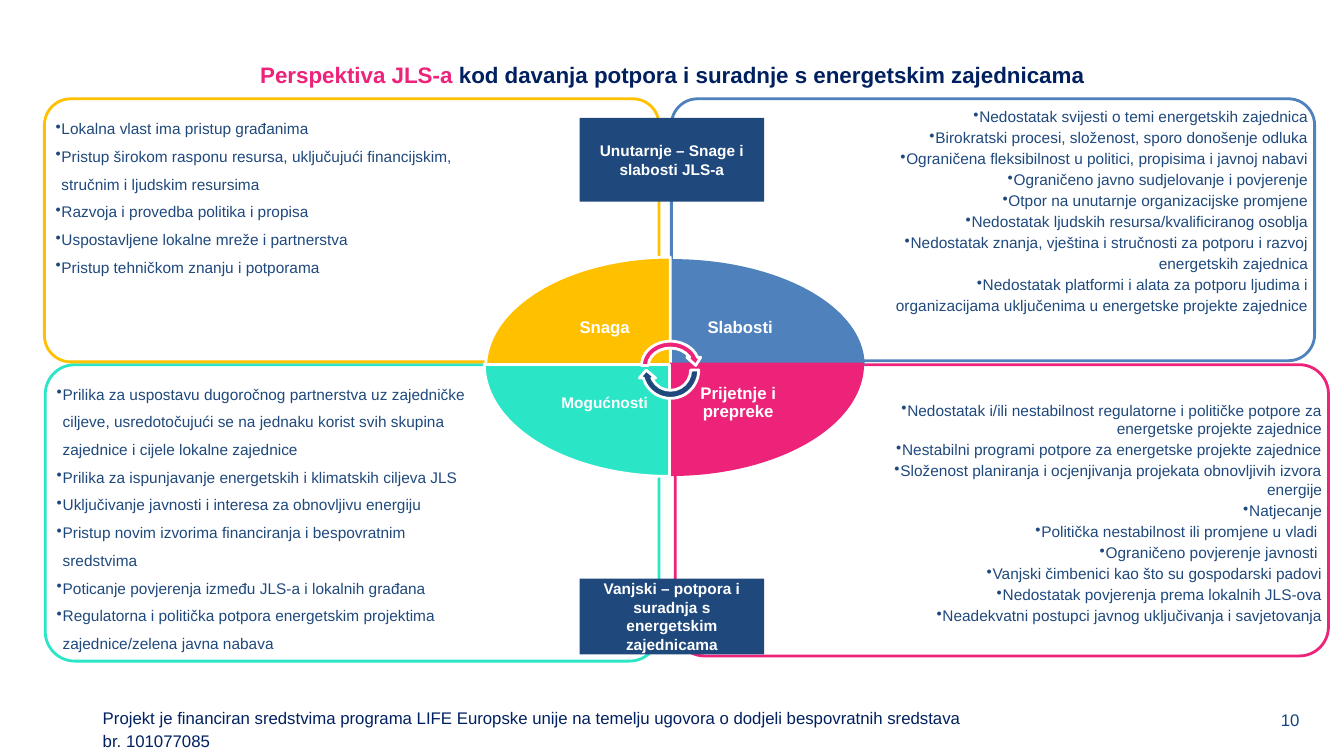
from dataclasses import dataclass

from lxml.etree import SubElement
from pptx import Presentation
from pptx.dml.color import RGBColor
from pptx.enum.shapes import MSO_SHAPE as SHAPE
from pptx.enum.text import MSO_ANCHOR as ANCHOR, PP_ALIGN as ALIGN
from pptx.oxml.ns import qn
from pptx.util import Cm, Pt


@dataclass(frozen=True)
class Theme:
    font: str = "Arial"
    white: str = "FFFFFF"
    title: str = "002060"
    body: str = "1F497D"
    page: str = "114682"
    strength: str = "FFC000"
    weakness: str = "4F81BD"
    opportunity: str = "2AE6C7"
    threat: str = "ED237A"
    title_size: int = 16
    label_size: int = 12
    body_size: int = 11
    line_width: int = 2


class SlideBuilder:
    def __init__(self, slide, theme):
        self.s, self.theme = slide, theme

    def style(self, runs, size, color, bold=False):
        for r in runs:
            r.font.name, r.font.size, r.font.bold = self.theme.font, Pt(size), bold
            r.font.color.rgb = RGBColor.from_string(color)

    def frame(self, sp, insets=(0.25, 0.13, 0.25, 0.13), anchor=ANCHOR.TOP):
        """Set insets (left, top, right, bottom) and anchor; return the text frame."""
        tf = sp.text_frame
        tf.word_wrap, tf.vertical_anchor = True, anchor
        tf.margin_left, tf.margin_top, tf.margin_right, tf.margin_bottom = map(Cm, insets)
        return tf

    def text(self, at, text, size, color, bold=False, align=ALIGN.LEFT, spacing=None, **frame):
        sp = self.s.shapes.add_textbox(*map(Cm, at))
        tf = self.frame(sp, **frame)
        tf.text = text
        p = tf.paragraphs[0]
        p.alignment, p.line_spacing = align, spacing
        self.style(p.runs, size, color, bold)
        return p

    def shape(self, kind, at, fill=None, line=None, rotation=0):
        sp = self.s.shapes.add_shape(kind, *map(Cm, at))
        sp.shadow.inherit = False
        sp.rotation = rotation
        if fill:
            sp.fill.solid()
            sp.fill.fore_color.rgb = RGBColor.from_string(fill)
        else:
            sp.fill.background()
        if line:
            sp.line.color.rgb = RGBColor.from_string(line)
            sp.line.width = Pt(self.theme.line_width)
        else:
            sp.line.fill.background()
        return sp

    def panel(self, at, line, fill=None):
        sp = self.shape(SHAPE.ROUNDED_RECTANGLE, at, fill, line)
        sp.adjustments[0] = 0.1
        if fill:
            color = sp.fill._xPr.find(f"{qn('a:solidFill')}/{qn('a:srgbClr')}")
            SubElement(color, qn("a:alpha"), val="90000")

    def bullets(self, at, items, align=ALIGN.LEFT, spacing=None, after=0, deep_from=99, **frame):
        """Add a bulleted list; items from index deep_from on sit one level lower."""
        tf = self.frame(self.s.shapes.add_textbox(*map(Cm, at)), **frame)
        tf.text = "\n".join(items)
        for i, p in enumerate(tf.paragraphs):
            deep = i >= deep_from
            p.level = 2 if deep else 1
            p.alignment, p.line_spacing, p.space_after = align, spacing, Pt(after)
            pPr = p._p.get_or_add_pPr()
            pPr.set("marL", str(Cm(0.3 if deep else 0.15)))
            pPr.set("indent", str(-Cm(0.15)))
            SubElement(pPr, qn("a:buChar"), char="•")
            self.style(p.runs, self.theme.body_size, self.theme.body)

    def heading_box(self, at, text):
        tf = self.frame(self.shape(SHAPE.RECTANGLE, at, self.theme.body), anchor=ANCHOR.MIDDLE)
        tf.text = text
        p = tf.paragraphs[0]
        p.alignment = ALIGN.CENTER
        self.style(p.runs, self.theme.body_size, self.theme.white, True)


STRENGTHS = [
    "Lokalna vlast ima pristup građanima",
    "Pristup širokom rasponu resursa, uključujući financijskim, stručnim i ljudskim resursima",
    "Razvoja i provedba politika i propisa",
    "Uspostavljene lokalne mreže i partnerstva",
    "Pristup tehničkom znanju i potporama",
]
WEAKNESSES = [
    "Nedostatak svijesti o temi energetskih zajednica",
    "Birokratski procesi, složenost, sporo donošenje odluka",
    "Ograničena fleksibilnost u politici, propisima i javnoj nabavi",
    "Ograničeno javno sudjelovanje i povjerenje",
    "Otpor na unutarnje organizacijske promjene",
    "Nedostatak ljudskih resursa/kvalificiranog osoblja",
    "Nedostatak znanja, vještina i stručnosti za potporu i razvoj energetskih zajednica",
    "Nedostatak platformi i alata za potporu ljudima i organizacijama uključenima u energetske projekte zajednice",
]
OPPORTUNITIES = [
    "Prilika za uspostavu dugoročnog partnerstva uz zajedničke ciljeve, usredotočujući se na jednaku korist svih skupina zajednice i cijele lokalne zajednice",
    "Prilika za ispunjavanje energetskih i klimatskih ciljeva JLS",
    "Uključivanje javnosti i interesa za obnovljivu energiju",
    "Pristup novim izvorima financiranja i bespovratnim sredstvima",
    "Poticanje povjerenja između JLS-a i lokalnih građana",
    "Regulatorna i politička potpora energetskim projektima zajednice/zelena javna nabava",
]
THREATS = [
    "Nedostatak i/ili nestabilnost regulatorne i političke potpore za energetske projekte zajednice",
    "Nestabilni programi potpore za energetske projekte zajednice",
    "Složenost planiranja i ocjenjivanja projekata obnovljivih izvora energije",
    "Natjecanje",
    "Politička nestabilnost ili promjene u vladi ",
    "Ograničeno povjerenje javnosti ",
    "Vanjski čimbenici kao što su gospodarski padovi",
    "Nedostatak povjerenja prema lokalnih JLS-ova",
    "Neadekvatni postupci javnog uključivanja i savjetovanja",
]


def main():
    prs = Presentation()
    prs.slide_width, prs.slide_height = Cm(33.87), Cm(19.05)
    t = Theme()
    b = SlideBuilder(prs.slides.add_slide(prs.slide_layouts[6]), t)

    b.text((2.34, 17.63, 22.66, 0.79),
           "Projekt je financiran sredstvima programa LIFE Europske unije na temelju ugovora "
           "o dodjeli bespovratnih sredstava br. 101077085",
           t.label_size, t.title, spacing=Pt(16.4))
    p = b.text((6.05, 1.07, 21.79, 1.6), "Perspektiva JLS-a ", t.title_size, t.threat, True,
               ALIGN.CENTER, anchor=ANCHOR.MIDDLE)
    r = p.add_run()
    r.text = "kod davanja potpora i suradnje s energetskim zajednicama"
    b.style([r], t.title_size, t.title, True)

    b.panel((17.02, 9.19, 16.46, 7.34), t.threat)
    b.bullets((22.12, 11.2, 11.2, 5.18), THREATS, ALIGN.RIGHT, after=1.8,
              insets=(0, 0, 0, 1.73), anchor=ANCHOR.MIDDLE)
    b.panel((1.14, 9.19, 15.47, 7.47), t.opportunity)
    b.bullets((1.3, 11.23, 10.49, 5.28), OPPORTUNITIES, spacing=1.5,
              insets=(0.13, 0.13, 0, 1.96), anchor=ANCHOR.MIDDLE)
    b.panel((16.92, 2.49, 16.21, 6.6), t.weakness)
    b.bullets((21.92, 2.64, 11.05, 4.65), WEAKNESSES, ALIGN.RIGHT, Pt(15), deep_from=3,
              insets=(0, 0, 0, 0))
    b.panel((1.12, 2.49, 15.49, 6.63), t.strength, t.white)
    b.bullets((1.27, 2.64, 10.57, 4.67), STRENGTHS, spacing=1.5, insets=(0.13,) * 4)

    wedges = [
        ((12.24, 6.48, 4.65, 2.77), 0, t.strength, t.white,
         "Snaga", (13.59, 7.29, 3.3, 1.96), t.label_size, 0.71),
        ((18.03, 5.44, 2.67, 4.85), 90, t.weakness, None,
         "Slabosti", (16.94, 7.32, 3.43, 1.88), t.label_size, 0.71),
        ((16.89, 9.17, 4.85, 2.79), 180, t.threat, t.threat,
         "Prijetnje i prepreke", (16.89, 9.17, 3.43, 1.98), t.label_size, 0.71),
        ((13.13, 8.26, 2.82, 4.67), 270, t.opportunity, t.white,
         "Mogućnosti", (13.59, 9.17, 3.3, 2.01), t.body_size, 0.23),
    ]
    for at, rotation, fill, line, label, label_at, size, inset in wedges:
        b.shape(SHAPE.PIE_WEDGE, at, fill, line, rotation)
        b.text(label_at, label, size, t.white, True, ALIGN.CENTER, 0.9,
               insets=(inset,) * 4, anchor=ANCHOR.MIDDLE)

    b.shape(SHAPE.CIRCULAR_ARROW, (16.08, 8.51, 1.63, 1.4), t.threat, t.white)
    b.shape(SHAPE.CIRCULAR_ARROW, (16.08, 8.51, 1.63, 1.63), t.body, t.white, 180)

    b.text((32.18, 17.91, 0.84, 0.18), "10", t.label_size, t.page, spacing=Pt(13.7),
           insets=(0.1, 0, 0, 0))
    b.heading_box((14.61, 2.97, 4.65, 2.11), "Unutarnje – Snage i slabosti JLS-a")
    b.heading_box((14.61, 14.58, 4.65, 1.91),
                  "Vanjski – potpora i suradnja s energetskim zajednicama")
    prs.save("out.pptx")


if __name__ == "__main__":
    main()
